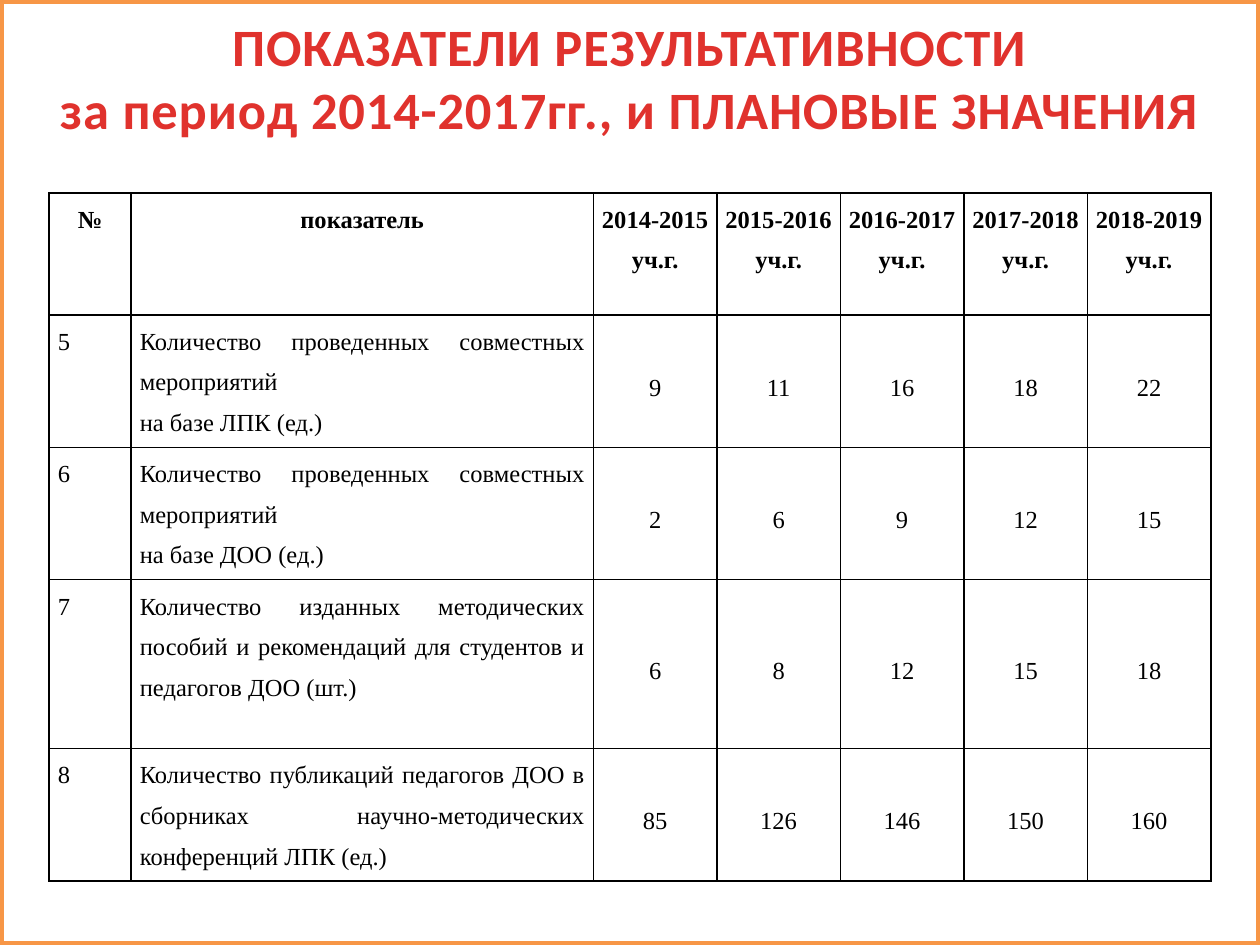
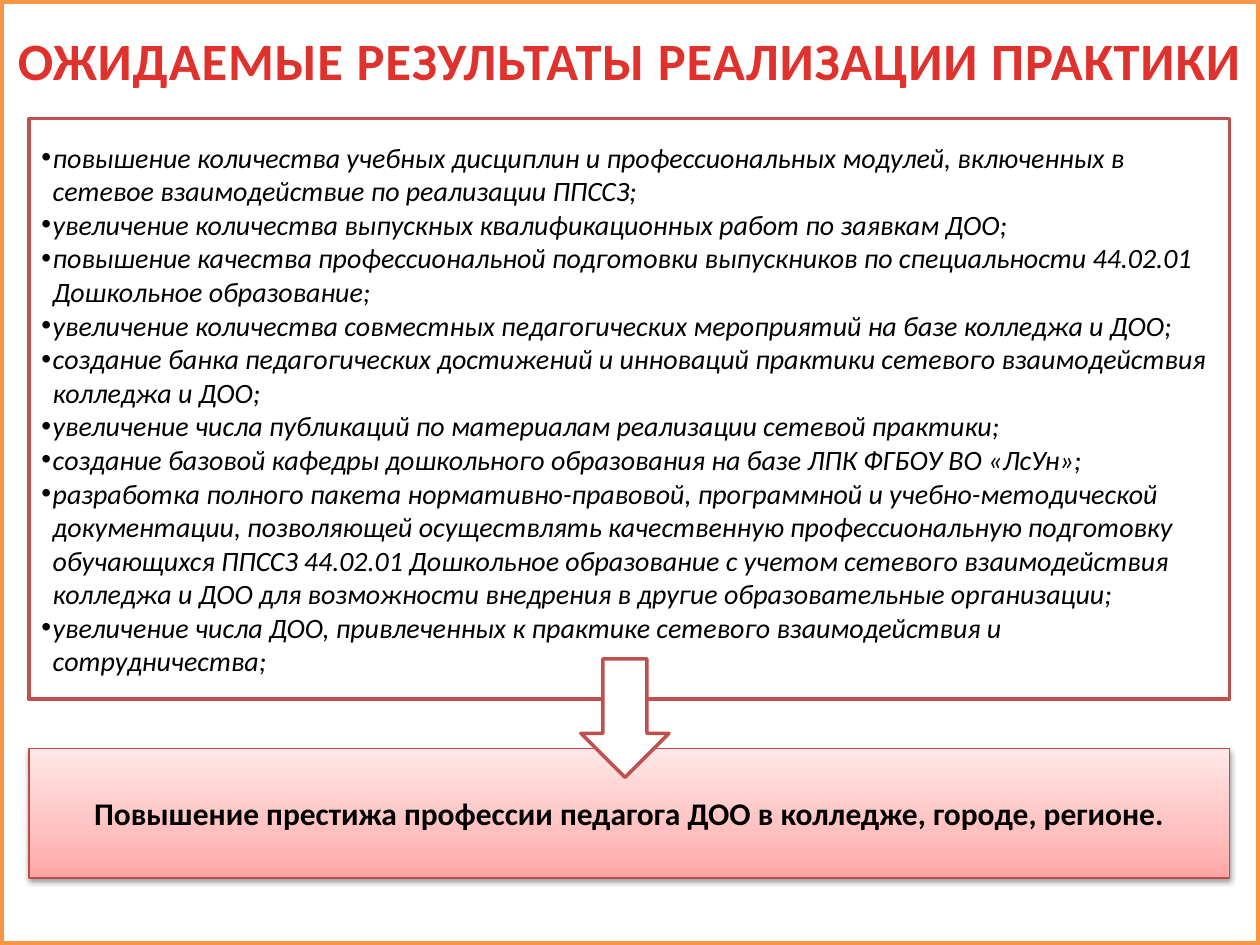
from dataclasses import dataclass

from pptx import Presentation
from pptx import util as u
from pptx.dml.color import RGBColor
from pptx.enum import shapes, text
from pptx.oxml.ns import qn
from lxml import etree

PX = 9144  # EMU per px, 100 px to the inch
WIDTH, HEIGHT = 1000, 750
ALIGN, ANCHOR = text.PP_ALIGN, text.MSO_ANCHOR
RECT, DOWN_ARROW = shapes.MSO_SHAPE.RECTANGLE, shapes.MSO_SHAPE.DOWN_ARROW


@dataclass(frozen=True)
class Theme:
    paper: str = "FFFFFF"
    ink: str = "000000"
    frame: str = "F79646"
    title: str = "E0322D"
    outline: str = "C0504D"
    goal_line: str = "BF4C48"
    goal_stops: tuple = ((0, "FFA6A5"), (35, "FFC0BF"), (100, "FFE7E7"))
    font: str = "Calibri"
    table_font: str = "Times New Roman"
    title_size: int = 30
    list_size: int = 16
    goal_size: int = 18
    table_size: int = 14


THEME = Theme()

YEARS = range(2014, 2019)
INDICATORS = [
    ("5", "Количество проведенных совместных мероприятий \nна базе ЛПК (ед.)", (9, 11, 16, 18, 22)),
    ("6", "Количество проведенных совместных мероприятий \nна базе ДОО (ед.)", (2, 6, 9, 12, 15)),
    ("7", "Количество изданных методических пособий и рекомендаций для студентов "
          "и педагогов ДОО (шт.)", (6, 8, 12, 15, 18)),
    ("8", "Количество публикаций педагогов ДОО в сборниках научно-методических "
          "конференций ЛПК (ед.)", (85, 126, 146, 150, 160)),
]
RESULTS = [
    "повышение количества учебных дисциплин и профессиональных модулей, включенных "
    "в сетевое взаимодействие по реализации ППССЗ;",
    "увеличение количества выпускных квалификационных работ по заявкам ДОО;",
    "повышение качества профессиональной подготовки выпускников по специальности "
    "44.02.01 Дошкольное образование;",
    "увеличение количества совместных педагогических мероприятий на базе колледжа и ДОО;",
    "создание банка педагогических достижений и инноваций практики сетевого "
    "взаимодействия колледжа и ДОО;",
    "увеличение числа публикаций по материалам реализации сетевой практики;",
    "создание базовой кафедры дошкольного образования на базе ЛПК ФГБОУ ВО «ЛсУн»;",
    "разработка полного пакета нормативно-правовой, программной и учебно-методической "
    "документации, позволяющей осуществлять качественную профессиональную подготовку "
    "обучающихся ППССЗ 44.02.01 Дошкольное образование с учетом сетевого взаимодействия "
    "колледжа и ДОО для возможности внедрения в другие образовательные организации;",
    "увеличение числа ДОО, привлеченных к практике сетевого взаимодействия и сотрудничества;",
]


def px(*lengths):
    return [u.Emu(n * PX) for n in lengths]


def rgb(color):
    return RGBColor.from_string(color)


def add_xml(parent, tag, **attrs):
    return etree.SubElement(parent, qn(tag), {k: str(v) for k, v in attrs.items()})


def format_text(tf, size, color=THEME.ink, font=THEME.font, align=ALIGN.LEFT,
                bold=False, italic=False, spacing=None):
    for p in tf.paragraphs:
        p.alignment = align
        p.line_spacing = spacing
        for r in p.runs:
            f = r.font
            f.name, f.size, f.bold, f.italic = font, u.Pt(size), bold, italic
            f.color.rgb = rgb(color)
        # The paragraph mark counts towards the height of a table row.
        mark = add_xml(p._p, "a:endParaRPr", sz=size * 100)
        add_xml(mark, "a:latin", typeface=font)


def add_box(slide, kind, at, line, weight):
    sp = slide.shapes.add_shape(kind, *px(*at))
    sp.shadow.inherit = False
    sp.fill.solid()
    sp.fill.fore_color.rgb = rgb(THEME.paper)
    sp.line.color.rgb = rgb(line)
    sp.line.width = u.Pt(weight)
    sp.text_frame.word_wrap = True
    sp.text_frame.vertical_anchor = ANCHOR.MIDDLE
    return sp


def add_framed_slide(prs, title, title_height):
    slide = prs.slides.add_slide(prs.slide_layouts[6])
    add_box(slide, RECT, (0, 0, WIDTH, HEIGHT), THEME.frame, 4.5)
    tf = slide.shapes.add_textbox(*px(0, 0, WIDTH, title_height)).text_frame
    tf.word_wrap = True
    tf.vertical_anchor = ANCHOR.MIDDLE
    tf.paragraphs[0].text = title
    format_text(tf, THEME.title_size, THEME.title, align=ALIGN.CENTER, bold=True)
    for r in tf.paragraphs[0].runs:
        r.font._element.set("spc", "50")
    return slide


def add_bullets(tf, hanging):
    for p in tf.paragraphs:
        pPr = p._p.get_or_add_pPr()
        pPr.set("marL", str(hanging * PX))
        pPr.set("indent", str(-hanging * PX))
        add_xml(pPr, "a:buFont", typeface="Arial")
        add_xml(pPr, "a:buChar", char="•")


def set_gradient(sp, stops):
    """Run the stops from the bottom of the shape to its top."""
    sp.fill.gradient()
    sp.fill.gradient_angle = 90
    gs_list = sp._element.spPr.find(".//" + qn("a:gsLst"))
    gs_list.clear()
    for position, color in stops:
        gs = add_xml(gs_list, "a:gs", pos=position * 1000)
        add_xml(gs, "a:srgbClr", val=color)


def add_drop_shadow(sp):
    effects = sp._element.spPr.find(qn("a:effectLst"))
    shadow = add_xml(effects, "a:outerShdw", blurRad=u.Pt(3.1), dist=u.Pt(1.6),
                     dir=5400000, rotWithShape=0)
    color = add_xml(shadow, "a:srgbClr", val=THEME.ink)
    add_xml(color, "a:alpha", val=38000)


def set_borders(cell):
    tcPr = cell._tc.get_or_add_tcPr()
    for side in ("a:lnL", "a:lnR", "a:lnT", "a:lnB"):
        ln = add_xml(tcPr, side, w=u.Pt(1))
        add_xml(add_xml(ln, "a:solidFill"), "a:srgbClr", val=THEME.ink)


def fill_cell(cell, content, margin, align, anchor, bold):
    set_borders(cell)
    cell.fill.background()
    cell.margin_left, cell.margin_right, cell.margin_top, cell.margin_bottom = px(
        margin, margin, 0, 0)
    cell.vertical_anchor = anchor
    cell.text_frame.text = content
    format_text(cell.text_frame, THEME.table_size, font=THEME.table_font,
                align=align, bold=bold, spacing=1.5)


def add_indicator_table(slide, left, top):
    widths = [65, 367] + [98] * len(YEARS)
    heights = [97, 97, 97, 134, 97]
    frame = slide.shapes.add_table(len(heights), len(widths),
                                   *px(left, top, sum(widths), sum(heights)))
    table = frame.table
    table.first_row = table.horz_banding = False
    for column, width in zip(table.columns, px(*widths)):
        column.width = width
    for row, height in zip(table.rows, px(*heights)):
        row.height = height

    header = ["№", "показатель"] + [f"{y}-{y + 1} уч.г." for y in YEARS]
    for col, label in enumerate(header):
        fill_cell(table.cell(0, col), label, 6, ALIGN.CENTER, ANCHOR.TOP, True)
    for row, (number, indicator, values) in enumerate(INDICATORS, 1):
        for col, label in enumerate((number, indicator)):
            fill_cell(table.cell(row, col), label, 7, ALIGN.JUSTIFY, ANCHOR.TOP, False)
        for col, value in enumerate(values, 2):
            fill_cell(table.cell(row, col), str(value), 7, ALIGN.CENTER, ANCHOR.MIDDLE, False)


def add_results_list(slide, at):
    tf = add_box(slide, RECT, at, THEME.outline, 2).text_frame
    tf.text = "\n".join(RESULTS)
    format_text(tf, THEME.list_size, italic=True)
    add_bullets(tf, 9)


def add_goal(slide, at, goal):
    sp = add_box(slide, RECT, at, THEME.goal_line, 0.75)
    set_gradient(sp, THEME.goal_stops)
    add_drop_shadow(sp)
    sp.text_frame.text = goal
    format_text(sp.text_frame, THEME.goal_size, align=ALIGN.CENTER, bold=True)


def main():
    prs = Presentation()
    prs.slide_width, prs.slide_height = px(WIDTH, HEIGHT)

    slide = add_framed_slide(
        prs, "ПОКАЗАТЕЛИ РЕЗУЛЬТАТИВНОСТИ\vза период 2014-2017гг., и ПЛАНОВЫЕ ЗНАЧЕНИЯ", 123)
    add_indicator_table(slide, 39, 153)

    slide = add_framed_slide(prs, "ОЖИДАЕМЫЕ РЕЗУЛЬТАТЫ РЕАЛИЗАЦИИ ПРАКТИКИ", 94)
    add_results_list(slide, (23, 94, 953, 461))
    add_goal(slide, (23, 594, 953, 103),
             "Повышение престижа профессии педагога ДОО в колледже, городе, регионе.")
    add_box(slide, DOWN_ARROW, (461, 523, 70, 94), THEME.outline, 2)

    prs.save("out.pptx")


if __name__ == "__main__":
    main()
